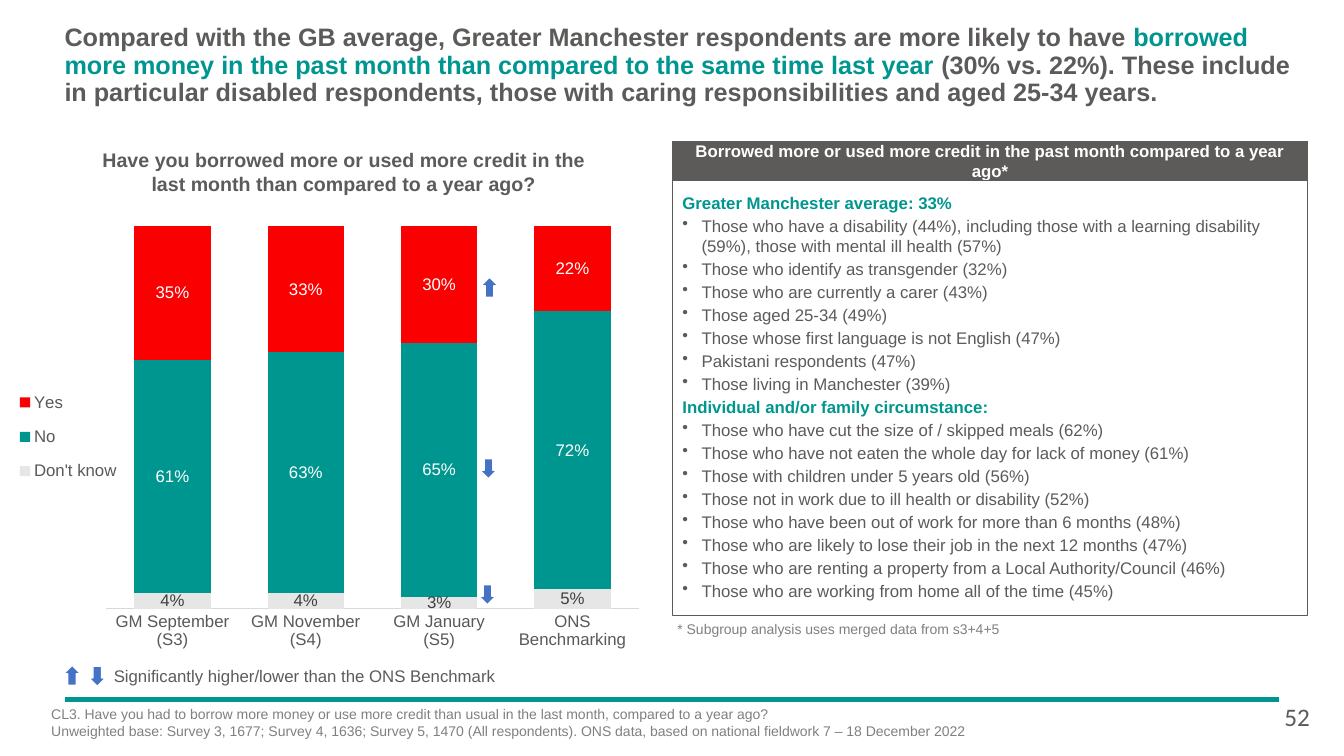
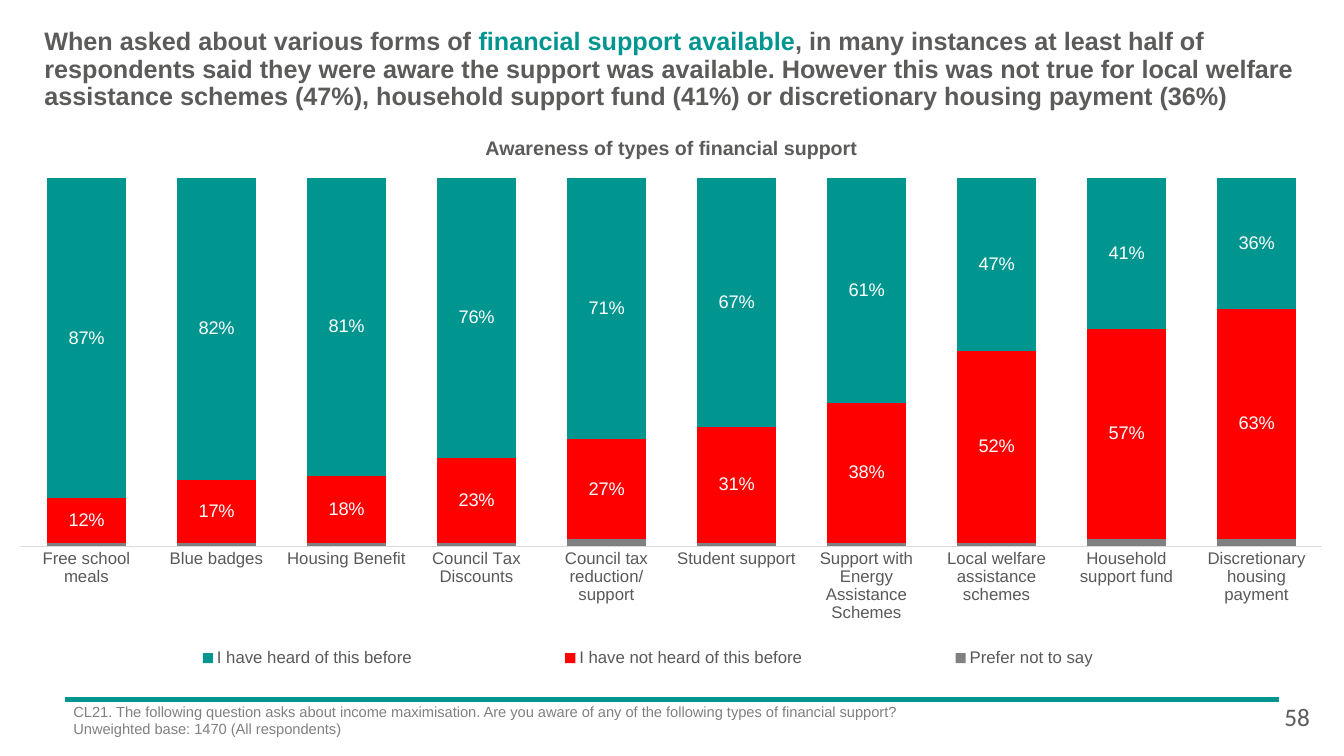
from lxml.etree import SubElement
from pptx import Presentation
from pptx.chart.data import CategoryChartData
from pptx.dml.color import RGBColor
from pptx.enum.chart import XL_CHART_TYPE as ChartType, XL_LABEL_POSITION as LabelPosition
from pptx.enum.chart import XL_LEGEND_POSITION as LegendPosition, XL_TICK_MARK as TickMark
from pptx.enum.shapes import MSO_CONNECTOR as Connector, MSO_SHAPE as Shape
from pptx.enum.text import MSO_ANCHOR as Anchor, PP_ALIGN as Align
from pptx.oxml.ns import qn
from pptx.util import Pt

PX = 9144  # 100 px to the inch
TEAL, GREY, RED, WHITE = "009690", "5C5B5A", "FA0000", "FFFFFF"
NOTE_GREY, AXIS_TEXT, AXIS_LINE, ARROW_BLUE = "808080", "595959", "D9D9D9", "4472C4"
INSETS = (10, 5, 10, 5)


def color(value):
    return RGBColor.from_string(value)


def emu(*lengths):
    return [length * PX for length in lengths]


def style_font(font, size, value, bold=False, name="Arial"):
    font.name, font.size, font.bold = name, Pt(size), bold
    font.color.rgb = color(value)


def set_insets(frame, insets):
    (frame.margin_left, frame.margin_top,
     frame.margin_right, frame.margin_bottom) = emu(*insets)


def add_text(slide, box, text, size, value=GREY, bold=False, align=Align.LEFT,
             insets=INSETS, wrap=True, name="Arial"):
    frame = slide.shapes.add_textbox(*emu(*box)).text_frame
    frame.word_wrap = wrap
    set_insets(frame, insets)
    frame.text = text
    for paragraph in frame.paragraphs:
        paragraph.alignment = align
        for run in paragraph.runs:
            style_font(run.font, size, value, bold, name)
    return frame


def add_box(slide, kind, box, fill, line, width):
    shape = slide.shapes.add_shape(kind, *emu(*box))
    shape.shadow.inherit = False
    if fill:
        shape.fill.solid()
        shape.fill.fore_color.rgb = color(fill)
    else:
        shape.fill.background()
    shape.line.color.rgb = color(line)
    shape.line.width = Pt(width)
    return shape


def add_arrow(slide, left, top, kind):
    add_box(slide, kind, (left, top, 17, 20), ARROW_BLUE, WHITE, 1)


def add_frame(slide, title_box, title_parts, footer_box, footer, footer_size, number):
    """Title, rule, source note and page number."""
    rule = slide.shapes.add_connector(Connector.STRAIGHT, *emu(64, 694, 1269, 694))
    rule.line.color.rgb = color(TEAL)
    rule.line.width = Pt(3)
    SubElement(rule._element.spPr, qn("a:effectLst"))

    paragraph = add_text(slide, title_box, "", 18, insets=(0, 0, 0, 0)).paragraphs[0]
    paragraph.line_spacing = 0.9
    for text, value in title_parts:
        run = paragraph.add_run()
        run.text = text
        style_font(run.font, 18, value, True)

    add_text(slide, footer_box, footer, footer_size, NOTE_GREY)
    add_text(slide, (1264, 691, 53, 40), number, 18, name="Calibri")


def add_chart_title(slide, box, text):
    add_text(slide, box, text, 14, bold=True, align=Align.CENTER, insets=(0, 0, 0, 0))


def set_layout(parent, index, position, inner=False):
    for old in parent.findall(qn("c:layout")):
        parent.remove(old)
    layout = SubElement(parent, qn("c:layout"))
    parent.insert(index, layout)
    manual = SubElement(layout, qn("c:manualLayout"))
    entries = [("layoutTarget", "inner")] if inner else []
    entries += [("xMode", "edge"), ("yMode", "edge"), *zip("xywh", position)]
    for tag, value in entries:
        SubElement(manual, qn("c:" + tag)).set("val", str(value))


def add_stacked_chart(slide, box, categories, series_rows, gap, label_size,
                      plot_area, legend_side, legend_area):
    """Each series row holds name, fill, label colour (or None) and percentages."""
    data = CategoryChartData(number_format="0%")
    data.categories = categories
    for name, _, _, percentages in series_rows:
        data.add_series(name, [value / 100 for value in percentages])
    chart = slide.shapes.add_chart(ChartType.COLUMN_STACKED_100, *emu(*box), data).chart
    chart.has_title = False
    style_font(chart.font, 10, "000000")

    # Axes
    chart.value_axis.visible = False
    chart.value_axis.has_major_gridlines = False
    axis = chart.category_axis
    axis.major_tick_mark = axis.minor_tick_mark = TickMark.NONE
    axis.format.line.color.rgb = color(AXIS_LINE)
    axis.format.line.width = Pt(0.75)
    style_font(axis.tick_labels.font, 12, AXIS_TEXT)

    # Columns and value labels
    plot = chart.plots[0]
    plot.gap_width, plot.overlap, plot.vary_by_categories = gap, 100, False
    for series, (_, fill, label_color, _) in zip(plot.series, series_rows):
        series.format.fill.solid()
        series.format.fill.fore_color.rgb = color(fill)
        if label_color:
            labels = series.data_labels
            labels.show_value = True
            labels.position = LabelPosition.CENTER
            labels.number_format, labels.number_format_is_linked = "0%", False
            style_font(labels.font, label_size, label_color)

    # Legend and plot area
    chart.has_legend = True
    chart.legend.position = legend_side
    chart.legend.include_in_layout = False
    style_font(chart.legend.font, 12, AXIS_TEXT)
    set_layout(chart.element.xpath("c:chart/c:plotArea")[0], 0, plot_area, inner=True)
    set_layout(chart.element.xpath("c:chart/c:legend")[0], 1, legend_area)


def add_arrow_key(slide, left, top):
    add_arrow(slide, left, top + 4, Shape.UP_ARROW)
    add_arrow(slide, left + 25, top + 5, Shape.DOWN_ARROW)
    add_text(slide, (left + 40, top, 402, 30),
             "Significantly higher/lower than the ONS Benchmark", 12, wrap=False)


def add_subgroup_panel(slide, box, heading, sections, note):
    left, top, width, height = box
    header_height = 39

    header = add_box(slide, Shape.RECTANGLE, (left, top, width, header_height), GREY, GREY, 0.75)
    header.text_frame.text = heading
    header.text_frame.word_wrap = True
    header.text_frame.vertical_anchor = Anchor.MIDDLE
    paragraph = header.text_frame.paragraphs[0]
    paragraph.alignment = Align.CENTER
    style_font(paragraph.runs[0].font, 12, WHITE, True)

    body = add_box(slide, Shape.RECTANGLE,
                   (left, top + header_height, width, height - header_height), None, GREY, 0.75)
    frame = body.text_frame
    frame.word_wrap = True
    frame.vertical_anchor = Anchor.TOP
    set_insets(frame, (10, 12, 10, 5))
    lines = [(text, text == title) for title, items in sections for text in (title, *items)]
    frame.text = "\n".join(text for text, _ in lines)
    for paragraph, (_, is_title) in zip(frame.paragraphs, lines):
        paragraph.alignment = Align.LEFT
        paragraph.space_after = Pt(2)
        style_font(paragraph.runs[0].font, 12, TEAL if is_title else GREY, is_title)
        if not is_title:
            properties = paragraph._p.get_or_add_pPr()
            properties.set("marL", str(19 * PX))
            properties.set("indent", str(-19 * PX))
            SubElement(properties, qn("a:buChar")).set("char", "•")

    add_text(slide, (left - 5, top + height, 358, 27), note, 10, NOTE_GREY)


def build_borrowing_slide(slide):
    add_frame(
        slide, (64, 25, 1216, 87),
        [("Compared with the GB average, Greater Manchester respondents are more likely to have ", GREY),
         ("borrowed more money in the past month than compared to the same time last year ", TEAL),
         ("(30% vs. 22%). These include in particular disabled respondents, those with caring "
          "responsibilities and aged 25-34 years.", GREY)],
        (41, 695, 1198, 56),
        "CL3. Have you had to borrow more money or use more credit than usual in the last month, "
        "compared to a year ago?\n"
        "Unweighted base: Survey 3, 1677; Survey 4, 1636; Survey 5, 1470 (All respondents). "
        "ONS data, based on national fieldwork 7 – 18 December 2022", 10, "52")
    add_chart_title(slide, (99, 147, 484, 47),
                    "Have you borrowed more or used more credit in the last month "
                    "than compared to a year ago?")

    chart_left, chart_top = -1, 212
    add_stacked_chart(
        slide, (chart_left, chart_top, 658, 485),
        ["GM September (S3)", "GM November (S4)", "GM January (S5)", "ONS Benchmarking"],
        [("Don't know", "E7E6E6", "404040", (4, 4, 3, 5)),
         ("No", TEAL, WHITE, (61, 63, 65, 72)),
         ("Yes", RED, WHITE, (35, 33, 30, 22))],
        75, 12, (0.161, 0.026, 0.804, 0.782),
        LegendPosition.LEFT, (0.017, 0.334, 0.175, 0.245))
    for x, y, kind in ((478, 63, Shape.UP_ARROW), (477, 243, Shape.DOWN_ARROW),
                       (476, 368, Shape.DOWN_ARROW)):
        add_arrow(slide, chart_left + x, chart_top + y, kind)
    add_arrow_key(slide, 63, 656)

    add_subgroup_panel(
        slide, (667, 140, 630, 471),
        "Borrowed more or used more credit in the past month compared to a year ago*",
        [("Greater Manchester average: 33%", [
            "Those who have a disability (44%), including those with a learning disability (59%), "
            "those with mental ill health (57%)",
            "Those who identify as transgender (32%)",
            "Those who are currently a carer (43%)",
            "Those aged 25-34 (49%)",
            "Those whose first language is not English (47%)",
            "Pakistani respondents (47%)",
            "Those living in Manchester (39%)"]),
         ("Individual and/or family circumstance:", [
             "Those who have cut the size of / skipped meals (62%)",
             "Those who have not eaten the whole day for lack of money (61%)",
             "Those with children under 5 years old (56%)",
             "Those not in work due to ill health or disability (52%)",
             "Those who have been out of work for more than 6 months (48%)",
             "Those who are likely to lose their job in the next 12 months (47%)",
             "Those who are renting a property from a Local Authority/Council (46%)",
             "Those who are working from home all of the time (45%)"])],
        "* Subgroup analysis uses merged data from s3+4+5")


def build_awareness_slide(slide):
    add_frame(
        slide, (44, 29, 1247, 81),
        [("When asked about various forms of ", GREY),
         ("financial support available", TEAL),
         (", in many instances at least half of respondents said they were aware the support was "
          "available. However this was not true for local welfare assistance schemes (47%), "
          "household support fund (41%) or discretionary housing payment (36%)", GREY)],
        (63, 692, 1198, 56),
        "CL21. The following question asks about income maximisation. Are you aware of any of the "
        "following types of financial support?\nUnweighted base: 1470 (All respondents)", 10.5, "58")
    add_chart_title(slide, (310, 135, 712, 24), "Awareness of types of financial support")
    add_stacked_chart(
        slide, (20, 161, 1296, 522),
        ["Free school meals", "Blue badges", "Housing Benefit", "Council Tax Discounts",
         "Council tax reduction/support", "Student support", "Support with Energy Assistance Schemes",
         "Local welfare assistance schemes", "Household support fund", "Discretionary housing payment"],
        [("Prefer not to say", NOTE_GREY, None, (1, 1, 1, 1, 2, 1, 1, 1, 2, 2)),
         ("I have not heard of this before", "FF0000", WHITE,
          (12, 17, 18, 23, 27, 31, 38, 52, 57, 63)),
         ("I have heard of this before", TEAL, WHITE,
          (87, 82, 81, 76, 71, 67, 61, 47, 41, 36))],
        65, 13, (0.001, 0.03, 0.995, 0.7),
        LegendPosition.RIGHT, (0.027, 0.904, 0.907, 0.077))


def main():
    presentation = Presentation()
    presentation.slide_width, presentation.slide_height = emu(1333, 750)
    for build in (build_borrowing_slide, build_awareness_slide):
        build(presentation.slides.add_slide(presentation.slide_layouts[6]))
    presentation.save("out.pptx")


if __name__ == "__main__":
    main()
